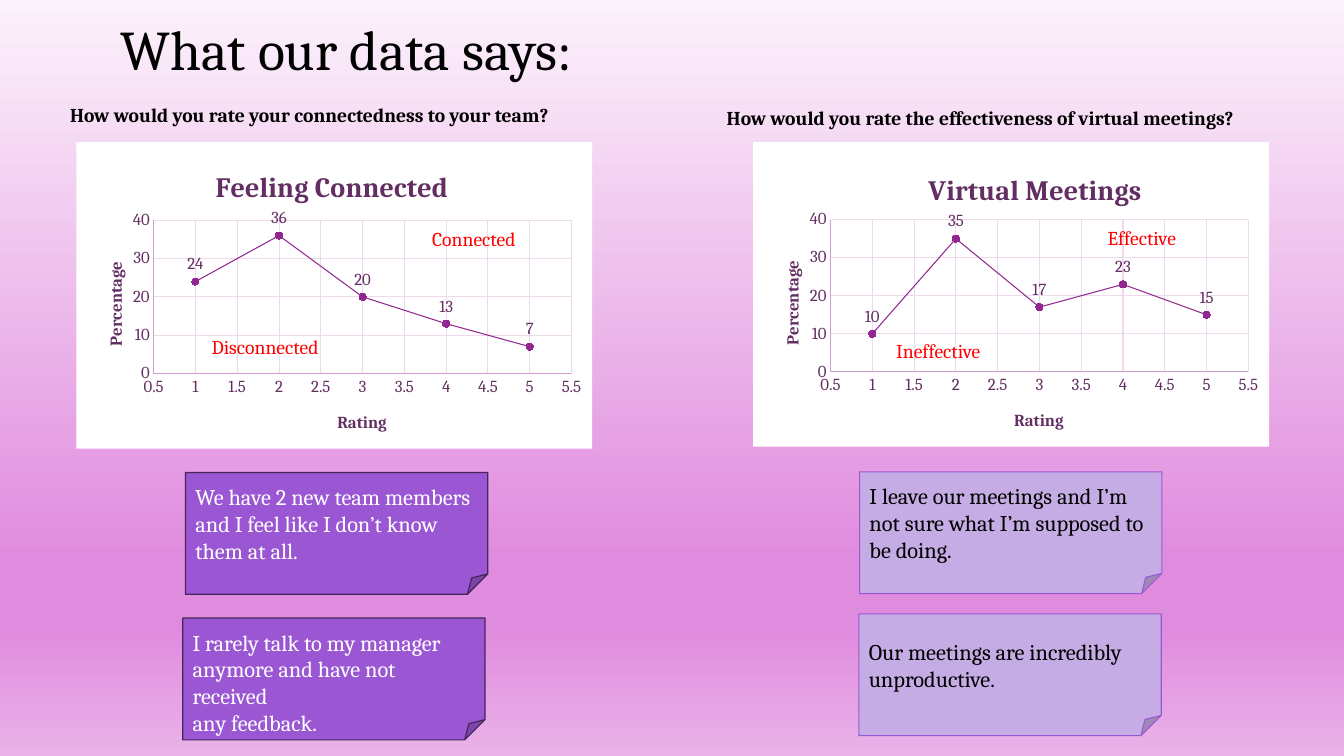
import pptx
import pptx.chart.data
import pptx.chart.datalabel
import pptx.dml.color
import pptx.enum.chart
import pptx.enum.shapes
import pptx.enum.text
import pptx.oxml
import pptx.oxml.ns
import pptx.util
from lxml import etree

Pt = pptx.util.Pt
qn = pptx.oxml.ns.qn
FONT = "Cambria"
PLUM, ORCHID, GRID, AXIS = "632E62", "92278F", "EEDAED", "D19BD0"
VIOLET, LILAC, DARK_VIOLET = "9B57D3", "C6ACE4", "44265C"
BACKGROUND_STOPS = [(0, "FCF2FB"), (74, "E08CDE"), (83, "E08CDE"), (100, "EAB2E9")]


def color(hex_text):
    return pptx.dml.color.RGBColor.from_string(hex_text)


def style_font(font, size, hex_text, bold=False):
    font.name, font.size, font.bold = FONT, Pt(size), bold
    font.color.rgb = color(hex_text)


def style_line(line, hex_text, width=0.75):
    line.color.rgb = color(hex_text)
    line.width = Pt(width)


def write(frame, text, size, hex_text, bold=False):
    frame.text = text
    for para in frame.paragraphs:
        para.alignment = pptx.enum.text.PP_ALIGN.LEFT
        style_font(para.font, size, hex_text, bold)


def paint_background(page):
    fill = page.background.fill
    fill.gradient()
    fill.gradient_angle = 270
    stops = next(page.element.iter(qn("a:gsLst")))
    for stop in list(stops):
        stops.remove(stop)
    for percent, hex_text in BACKGROUND_STOPS:
        stop = etree.SubElement(stops, qn("a:gs"), pos=str(percent * 1000))
        etree.SubElement(stop, qn("a:srgbClr"), val=hex_text)


def add_title(page, text):
    title = page.shapes.title
    title.left, title.top, title.width, title.height = Pt(79), Pt(7), Pt(509), Pt(55.5)
    title.text_frame.vertical_anchor = pptx.enum.text.MSO_ANCHOR.TOP
    write(title.text_frame, text, 40, "000000")


def add_label(page, text, left, top, width, hex_text, bold=False):
    box = page.shapes.add_textbox(Pt(left), Pt(top), Pt(width), Pt(24.5))
    box.text_frame.word_wrap = not bold
    write(box.text_frame, text, 14, hex_text, bold)


def add_note(page, text, left, top, fill, line, line_width, ink, top_inset=3.6):
    note = page.shapes.add_shape(pptx.enum.shapes.MSO_SHAPE.FOLDED_CORNER,
                                 Pt(left), Pt(top), Pt(216), Pt(87))
    note.shadow.inherit = False
    note.fill.solid()
    note.fill.fore_color.rgb = color(fill)
    style_line(note.line, line, line_width)
    frame = note.text_frame
    frame.word_wrap = True
    frame.vertical_anchor = pptx.enum.text.MSO_ANCHOR.MIDDLE
    frame.margin_top = Pt(top_inset)
    write(frame, text, 16, ink)


def place(parent, index, **values):
    """Set a manual layout, in fractions of the chart."""
    layout = parent.find(qn("c:layout"))
    if layout is None:
        layout = etree.Element(qn("c:layout"))
        parent.insert(index, layout)
    manual = etree.SubElement(layout, qn("c:manualLayout"))
    for name, value in values.items():
        etree.SubElement(manual, qn("c:" + name), val=str(value))


def set_chart_title(title, text, size, x, y):
    title.text_frame.text = text
    style_font(title.text_frame.paragraphs[0].font, size, PLUM, True)
    place(title.element, 1, xMode="edge", yMode="edge", x=x, y=y)


def style_axis(axis, text, low, high, step, x, y):
    axis.minimum_scale, axis.maximum_scale, axis.major_unit = low, high, step
    axis.major_tick_mark = axis.minor_tick_mark = pptx.enum.chart.XL_TICK_MARK.NONE
    axis.has_major_gridlines = True
    style_line(axis.major_gridlines.format.line, GRID)
    style_line(axis.format.line, AXIS)
    style_font(axis.tick_labels.font, 12, PLUM)
    set_chart_title(axis.axis_title, text, 12, x, y)


def fill_chart_white(chart):
    properties = etree.Element(qn("c:spPr"))
    solid = etree.SubElement(properties, qn("a:solidFill"))
    etree.SubElement(solid, qn("a:srgbClr"), val="FFFFFF")
    line = etree.SubElement(properties, qn("a:ln"))
    etree.SubElement(line, qn("a:noFill"))
    chart.element.find(qn("c:chart")).addnext(properties)


def add_rating_chart(page, title, values, left, height, title_x, title_y):
    data = pptx.chart.data.XyChartData()
    ratings = data.add_series("Series 1")
    for rating, percentage in enumerate(values, 1):
        ratings.add_data_point(rating, percentage)
    kind = pptx.enum.chart.XL_CHART_TYPE.XY_SCATTER_LINES
    chart = page.shapes.add_chart(kind, Pt(left), Pt(101.5), Pt(368.5), Pt(height), data).chart
    style_font(chart.font, 10, "000000")
    chart.has_legend = False
    fill_chart_white(chart)
    set_chart_title(chart.chart_title, title, 20, title_x, title_y)

    # Axes and plot area
    style_axis(chart.category_axis, "Rating", 0.5, 5.5, 0.5, 0.5, 0.87)
    style_axis(chart.value_axis, "Percentage", 0, 40, 10, 0.05, 0.38)
    body = next(chart.value_axis.axis_title.element.iter(qn("a:bodyPr")))
    body.set("rot", "-5400000")
    body.set("vert", "horz")
    place(next(chart.element.iter(qn("c:plotArea"))), 0, layoutTarget="inner",
          xMode="edge", yMode="edge", x=0.15, y=0.255, w=0.81, h=0.5)

    # Line, markers and value labels
    plot = chart.plots[0]
    plot.vary_by_categories = False
    series = plot.series[0]
    style_line(series.format.line, ORCHID)
    series.marker.style = pptx.enum.chart.XL_MARKER_STYLE.CIRCLE
    series.marker.size = 5
    series.marker.format.fill.solid()
    series.marker.format.fill.fore_color.rgb = color("9D0B99")
    style_line(series.marker.format.line, ORCHID)
    series_element = next(chart.element.iter(qn("c:ser")))
    labels = pptx.chart.datalabel.DataLabels(series_element.get_or_add_dLbls())
    labels.show_value = True
    labels.position = pptx.enum.chart.XL_LABEL_POSITION.ABOVE
    style_font(labels.font, 12, PLUM)


def main():
    deck = pptx.Presentation()
    deck.slide_width, deck.slide_height = Pt(960), Pt(540)
    page = deck.slides.add_slide(deck.slide_layouts[5])
    paint_background(page)
    add_title(page, "What our data says:")

    # Quotes from the team
    dark = (VIOLET, DARK_VIOLET, 0.85, "FFFFFF")
    light = (LILAC, VIOLET, 0.75, "000000")
    add_note(page, "We have 2 new team members and I feel like I don’t know them at all.",
             132.5, 337.5, *dark)
    add_note(page, "I rarely talk to my manager anymore and have not received\nany feedback.",
             130.5, 441.5, *dark, top_inset=23)
    add_note(page, "I leave our meetings and I’m not sure what I’m supposed to be doing.",
             614, 337, *light)
    add_note(page, "Our meetings are incredibly unproductive.", 613.5, 438.5, *light)

    # Connectedness
    add_rating_chart(page, "Feeling Connected", [24, 36, 20, 13, 7], 54.5, 219, 0.26, 0.07)
    add_label(page, "Disconnected", 144, 235.5, 120, "FF0000")
    add_label(page, "Connected", 301.5, 158.5, 120, "FF0000")
    add_label(page, "How would you rate your connectedness to your team?",
              43, 70, 396, "000000", True)

    # Virtual meetings
    add_rating_chart(page, "Virtual Meetings", [10, 35, 17, 23, 15], 538, 217.5, 0.33, 0.08)
    add_label(page, "Ineffective", 633, 238.5, 120, "FF0000")
    add_label(page, "Effective", 784, 157.5, 120, "FF0000")
    add_label(page, "How would you rate the effectiveness of virtual meetings?",
              512, 72, 420.5, "000000", True)

    deck.save("out.pptx")


if __name__ == "__main__":
    main()
